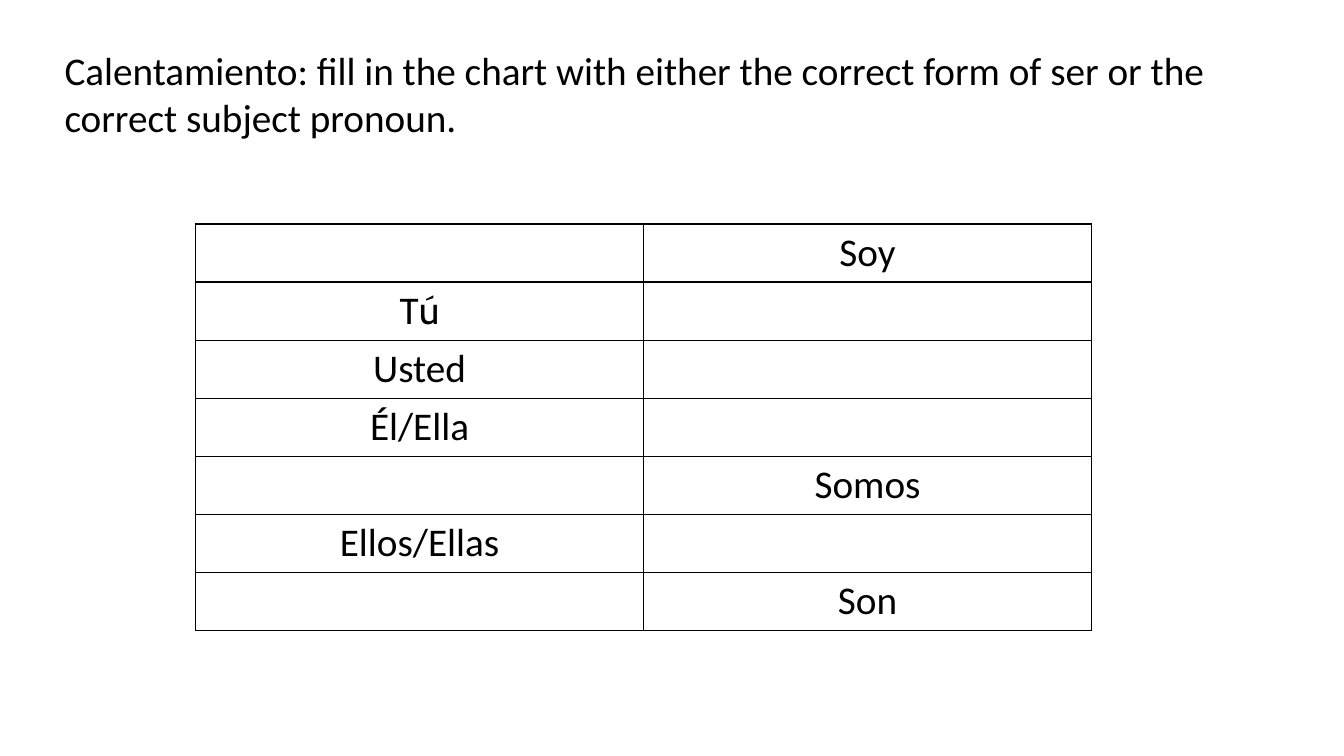
from lxml import etree
from pptx import Presentation
from pptx.dml.color import RGBColor
from pptx.enum.text import MSO_ANCHOR, MSO_AUTO_SIZE, PP_ALIGN
from pptx.oxml.ns import qn
from pptx.util import Pt

LEFT, CENTER = PP_ALIGN.LEFT, PP_ALIGN.CENTER
TOP = MSO_ANCHOR.TOP
NO_AUTO_SIZE = MSO_AUTO_SIZE.NONE
TITLE_ONLY = 5
BLACK = RGBColor(0, 0, 0)
BODY_FONT, ACCENT_FONT = "Calibri", "Cabin"
TEXT_FORMAT = {"size": Pt(28), "bold": False}
ROW_HEIGHT, COLUMN_WIDTH = Pt(41.4), Pt(320)

HEADING = ("Calentamiento: fill in the chart with either the correct form "
           "of ser or the correct subject pronoun.")
CONJUGATIONS = [
    ([], ["Soy"]),
    (["T", "ú"], []),
    (["Usted"], []),
    (["Él/Ella"], []),
    ([], ["Somos"]),
    (["Ellos/Ellas"], []),
    ([], ["Son"]),
]


def set_attributes(target, values):
    """Set each named attribute of the target."""
    for name, value in values.items():
        setattr(target, name, value)


def write_runs(paragraph, texts, alignment):
    """Write black runs, with a lone accented letter in the accent font."""
    paragraph.alignment = alignment
    for text in texts:
        run = paragraph.add_run()
        run.text = text
        set_attributes(run.font, TEXT_FORMAT)
        run.font.name = ACCENT_FONT if text == "ú" else BODY_FONT
        run.font.color.rgb = BLACK


def add_borders(cell):
    """Draw a thin black line on the four sides of a cell."""
    properties = cell._tc.get_or_add_tcPr()
    for side in ("lnL", "lnR", "lnT", "lnB"):
        line = etree.SubElement(properties, qn(f"a:{side}"), w=str(Pt(1)))
        fill = etree.SubElement(line, qn("a:solidFill"))
        etree.SubElement(fill, qn("a:srgbClr"), val=str(BLACK))


def format_title(slide):
    """Place and write the instruction heading."""
    title = slide.shapes.title
    set_attributes(title, {"left": Pt(38.9), "top": Pt(29.5),
                           "width": Pt(859), "height": Pt(75)})
    frame = title.text_frame
    set_attributes(frame, {"word_wrap": True, "auto_size": NO_AUTO_SIZE,
                           "vertical_anchor": TOP})
    write_runs(frame.paragraphs[0], [HEADING], LEFT)


def add_conjugation_table(slide):
    """Add the two-column table of pronouns and verb forms."""
    row_count = len(CONJUGATIONS)
    table = slide.shapes.add_table(
        row_count, 2, Pt(139.7), Pt(160),
        2 * COLUMN_WIDTH, row_count * ROW_HEIGHT).table
    set_attributes(table, {"first_row": False, "horz_banding": False})
    for column in table.columns:
        column.width = COLUMN_WIDTH
    for row, entries in zip(table.rows, CONJUGATIONS):
        row.height = ROW_HEIGHT
        for cell, texts in zip(row.cells, entries):
            add_borders(cell)
            cell.fill.background()
            write_runs(cell.text_frame.paragraphs[0], texts, CENTER)


def main():
    """Build and save the slide."""
    presentation = Presentation()
    set_attributes(presentation, {"slide_width": Pt(960),
                                  "slide_height": Pt(540)})
    slide = presentation.slides.add_slide(
        presentation.slide_layouts[TITLE_ONLY])
    format_title(slide)
    add_conjugation_table(slide)
    presentation.save("out.pptx")


if __name__ == "__main__":
    main()
